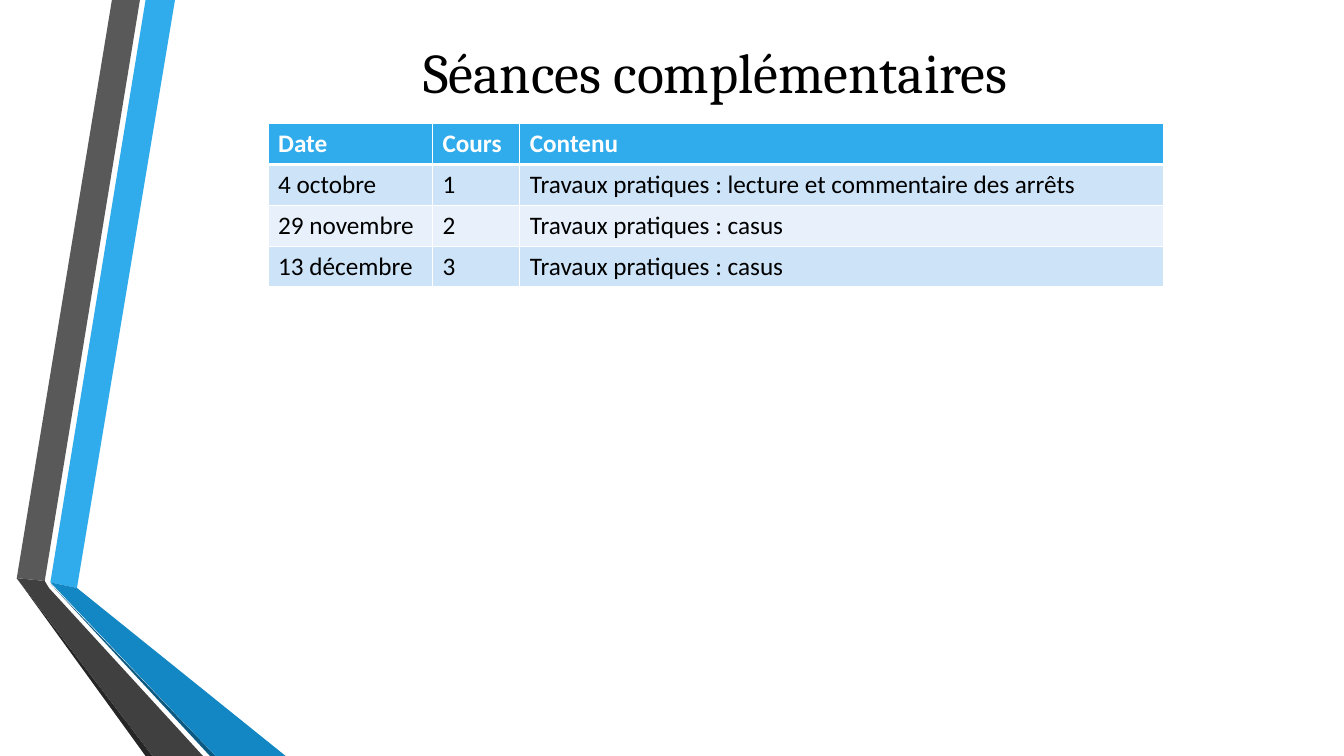
import pptx
import pptx.dml.color
import pptx.enum.text
import pptx.util
from lxml import etree

Pt = pptx.util.Pt
Align = pptx.enum.text.PP_ALIGN
Anchor = pptx.enum.text.MSO_ANCHOR

# Content
TITLE = "Séances complémentaires"
SESSIONS = [
    ("Date", "Cours", "Contenu"),
    ("4 octobre", "1", "Travaux pratiques : lecture et commentaire des arrêts"),
    ("29 novembre", "2", "Travaux pratiques : casus"),
    ("13 décembre", "3", "Travaux pratiques : casus"),
]

# Layout, in points
SLIDE_W, SLIDE_H = 960, 540
TITLE_BOX = (116.6, 23, 789.1, 55.4)
TABLE_LEFT, TABLE_TOP, ROW_H = 191.5, 88.2, 29.2
COLUMN_WIDTHS = (117.4, 62.4, 460)

# Folded ribbons: colour and corners, from back to front
RIBBONS = [
    ("30ACEC", [(36, 416.2), (55.4, 419.8), (124.6, 0), (104.4, 0)]),
    ("595959", [(100.1, 0), (79.9, 0), (11.5, 412.6), (31.7, 415.4)]),
    ("262626", [(11.5, 412.6), (104.4, SLIDE_H), (108.7, SLIDE_H)]),
    ("0C5A82", [(36, 416.6), (149.8, SLIDE_H), (154.1, SLIDE_H)]),
    ("1287C3", [(36, 416.2), (154.1, SLIDE_H), (203.8, SLIDE_H), (55.4, 419.8)]),
    ("404040", [(11.5, 412.6), (108.7, SLIDE_H), (145.4, SLIDE_H),
                (34.6, 419.8), (31.7, 415.4)]),
]

# Formats
TITLE_FONT = {"name": "Cambria", "size": Pt(40), "bold": False}
HEADER_FONT = {"name": "Calibri", "size": Pt(18), "bold": True}
BODY_FONT = {**HEADER_FONT, "bold": False}
HEADER_FILL, BAND_FILLS = "30ACEC", ("CDE3F8", "E8F1FB")
WHITE, BLACK = "FFFFFF", "000000"
RULE, HEADER_RULE = 1, 3


def paint(colour_format, colour):
    colour_format.rgb = pptx.dml.color.RGBColor.from_string(colour)


def fill(target, colour):
    target.fill.solid()
    paint(target.fill.fore_color, colour)


def write(frame, text, font_format, colour, align):
    paragraph = frame.paragraphs[0]
    paragraph.alignment = align
    run = paragraph.add_run()
    run.text = text
    for attribute, value in font_format.items():
        setattr(run.font, attribute, value)
    paint(run.font.color, colour)


def add_borders(cell, widths):
    properties = cell._tc.get_or_add_tcPr()
    for side, width in widths.items():
        line = etree.SubElement(properties, pptx.oxml.ns.qn("a:ln" + side),
                                w=str(Pt(width)))
        solid = etree.SubElement(line, pptx.oxml.ns.qn("a:solidFill"))
        etree.SubElement(solid, pptx.oxml.ns.qn("a:srgbClr"), val=WHITE)


deck = pptx.Presentation()
deck.slide_width, deck.slide_height = Pt(SLIDE_W), Pt(SLIDE_H)
slide = deck.slides.add_slide(deck.slide_layouts[6])

# Ribbons
for colour, corners in RIBBONS:
    outline = slide.shapes.build_freeform(*corners[0], scale=Pt(1))
    outline.add_line_segments(corners[1:], close=True)
    ribbon = outline.convert_to_shape()
    ribbon.shadow.inherit = False
    fill(ribbon, colour)
    ribbon.line.fill.background()

# Title
heading = slide.shapes.add_textbox(*map(Pt, TITLE_BOX)).text_frame
heading.word_wrap = True
heading.vertical_anchor = Anchor.MIDDLE
write(heading, TITLE, TITLE_FONT, BLACK, Align.CENTER)

# Table of sessions
schedule = slide.shapes.add_table(
    len(SESSIONS), len(COLUMN_WIDTHS), Pt(TABLE_LEFT), Pt(TABLE_TOP),
    Pt(sum(COLUMN_WIDTHS)), Pt(ROW_H * len(SESSIONS))).table
for column, width in zip(schedule.columns, COLUMN_WIDTHS):
    column.width = Pt(width)
for r, session in enumerate(SESSIONS):
    schedule.rows[r].height = Pt(ROW_H)
    is_header = r == 0
    borders = {"L": RULE, "R": RULE,
               "T": HEADER_RULE if r == 1 else RULE,
               "B": HEADER_RULE if is_header else RULE}
    for c, text in enumerate(session):
        cell = schedule.cell(r, c)
        add_borders(cell, borders)
        fill(cell, HEADER_FILL if is_header else BAND_FILLS[(r - 1) % 2])
        write(cell.text_frame, text, HEADER_FONT if is_header else BODY_FONT,
              WHITE if is_header else BLACK, Align.LEFT)

deck.save("out.pptx")
